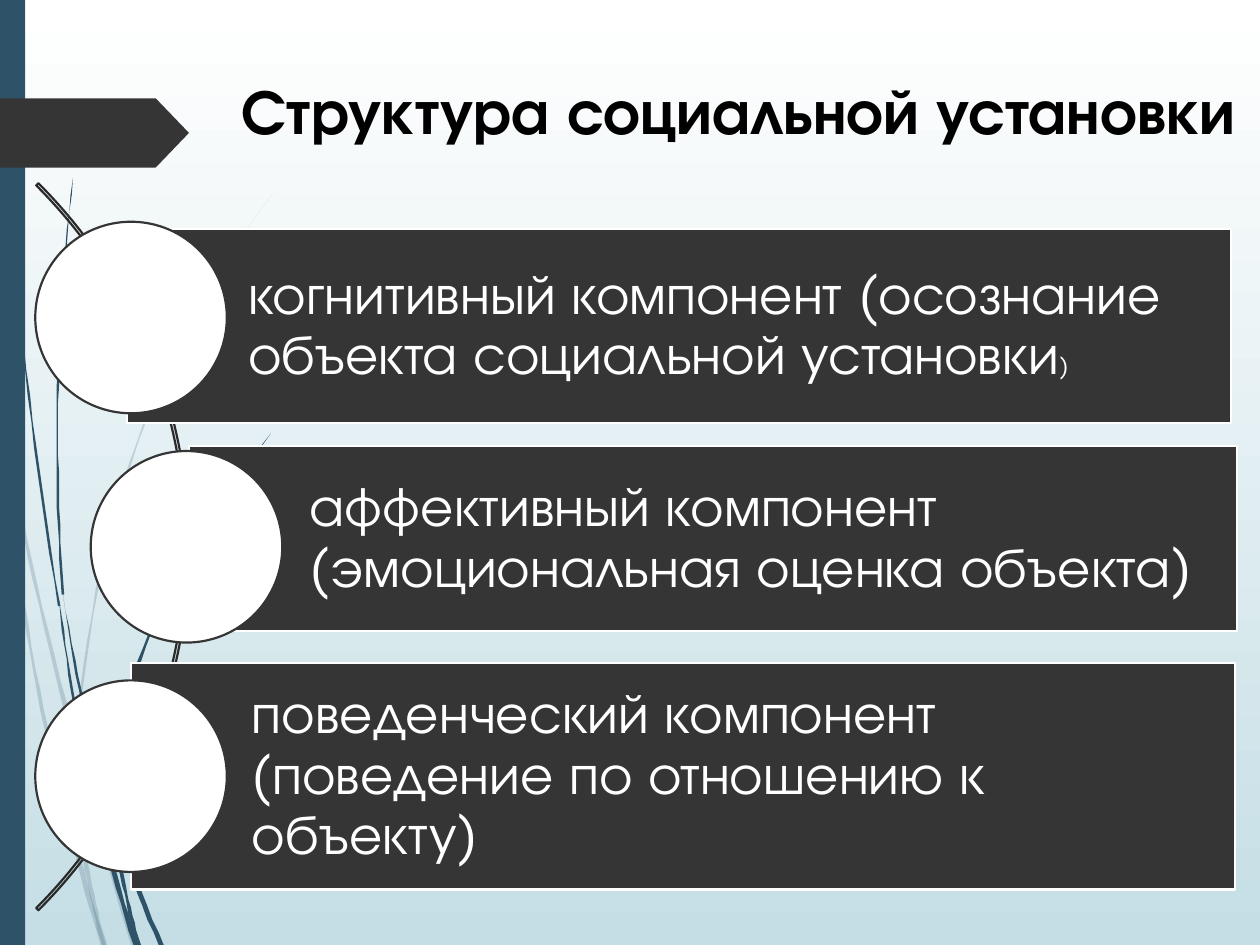
from math import sqrt

from lxml.etree import SubElement
from pptx import Presentation
from pptx.dml.color import RGBColor
from pptx.enum.shapes import MSO_SHAPE
from pptx.enum.text import MSO_ANCHOR, PP_ALIGN
from pptx.oxml.ns import qn
from pptx.util import Inches, Pt

FONT = "TeX Gyre Adventor"
WHITE = RGBColor(0xFF, 0xFF, 0xFF)
BLACK = RGBColor(0, 0, 0)
PALE = RGBColor(0xC5, 0xDE, 0xE5)
BLUE = RGBColor(0x2E, 0x53, 0x69)
DARK = RGBColor(0x35, 0x35, 0x35)
ARC = RGBColor(0x2A, 0x2A, 0x2A)

COLUMNS, ROWS = 1000, 750
prs = Presentation()
prs.slide_width, prs.slide_height = Inches(10), Inches(7.5)
CELL = prs.slide_width // COLUMNS
s = prs.slides.add_slide(prs.slide_layouts.get_by_name("Title Only"))

bg = s.background.fill
bg.gradient()
bg.gradient_angle = 270
for stop, color, pos in zip(bg.gradient_stops, (WHITE, PALE), (0, 1)):
    stop.color.rgb = color
    stop.position = pos


def paint(sp, fill=None, line=None):
    sp.shadow.inherit = False
    for part, color in ((sp.fill, fill), (sp.line.fill, line)):
        if color is None:
            part.background()
        else:
            part.solid()
            part.fore_color.rgb = color
    if line is not None:
        sp.line.width = Pt(1.25)


def add_preset(kind, left, top, width, height, fill=None, line=None):
    sp = s.shapes.add_shape(
        kind, left * CELL, top * CELL, width * CELL, height * CELL)
    paint(sp, fill, line)
    return sp


STEPS = 24
FAINT, SOLID = 20, 100
grass = [
    # tip, bend, root, root_width, opacity
]
grass = [
    ((0, 290), (11, 440), (106, ROWS), 4, FAINT),
    ((8, 350), (9, 510), (82, ROWS), 4, FAINT),
    ((217, 153), (80, 326), (60, 596), 2, FAINT),
    ((60, 590), (60, 670), (83, ROWS), 4, FAINT),
    ((2, 0), (4, 226), (47, 481), 2, SOLID),
    ((50, 472), (74, 630), (128, ROWS), 4, SOLID),
    ((47, 477), (64, 617), (108, ROWS), 4, SOLID),
    ((58, 141), (38, 306), (50, 472), 2, SOLID),
    ((215, 344), (88, 508), (89, 641), 3, SOLID),
    ((88, 631), (90, 675), (110, ROWS), 3, SOLID),
]
for tip, bend, root, root_width, opacity in grass:
    left_edge, right_edge = [], []
    for step in range(STEPS + 1):
        t = step / STEPS
        x, y = ((1 - t) ** 2 * a + 2 * t * (1 - t) * b + t ** 2 * c
                for a, b, c in zip(tip, bend, root))
        half = root_width * sqrt(t) / 2
        left_edge.append((x - half, y))
        right_edge.append((x + half, y))
    outline = left_edge + right_edge[::-1]
    fb = s.shapes.build_freeform(*outline[0], scale=CELL)
    fb.add_line_segments(outline[1:], close=True)
    blade = fb.convert_to_shape()
    paint(blade, BLUE)
    color = blade.element.spPr.find(qn("a:solidFill"))[0]
    SubElement(color, qn("a:alpha"), val=str(opacity * 1000))

add_preset(MSO_SHAPE.RECTANGLE, 0, 0, 20, ROWS, BLUE)
marker = add_preset(MSO_SHAPE.PENTAGON, 0, 78, 150, 55, DARK)
marker.adjustments[0] = 0.48

title = s.shapes.title
title.left, title.top = 130 * CELL, -CELL
title.width, title.height = 900 * CELL, 85 * CELL
tf = title.text_frame
tf.text = "Структура социальной установки"
tf.word_wrap = True
tf.vertical_anchor = MSO_ANCHOR.TOP
tf.margin_left, tf.margin_top, tf.margin_bottom = 22 * CELL, 58 * CELL, 0
p = tf.paragraphs[0]
p.alignment = PP_ALIGN.CENTER
p.font.name, p.font.size, p.font.bold = FONT, Pt(36), True
p.font.color.rgb = BLACK

arc = add_preset(MSO_SHAPE.BLOCK_ARC, -666, 26, 816, 816, line=ARC)
for i, value in enumerate((189, 27, 0.003)):
    arc.adjustments[i] = value

CIRCLE, CIRCLE_TOP, CIRCLE_STEP = 152, 176, 182
components = [
    ((101, 182, 876, 154), 28,
     [("когнитивный компонент (осознание объекта социальной установки", 32), (")", 14)]),
    ((150, 354, 832, 147), 72,
     [("аффективный компонент (эмоциональная оценка объекта)", 32)]),
    ((104, 526, 876, 180), 28,
     [("поведенческий компонент (поведение по отношению к объекту)", 32)]),
]
for row, (bar_box, circle_left, runs) in enumerate(components):
    bar = add_preset(MSO_SHAPE.RECTANGLE, *bar_box, DARK, WHITE)
    tf = bar.text_frame
    tf.word_wrap = True
    tf.vertical_anchor = MSO_ANCHOR.MIDDLE
    tf.margin_left = 96 * CELL
    tf.margin_right = tf.margin_top = tf.margin_bottom = 9 * CELL
    p = tf.paragraphs[0]
    p.alignment = PP_ALIGN.LEFT
    p.line_spacing = 0.9
    p.font.name = FONT
    p.font.color.rgb = WHITE
    for text, size in runs:
        r = p.add_run()
        r.text = text
        r.font.size = Pt(size)
    add_preset(MSO_SHAPE.OVAL, circle_left, CIRCLE_TOP + CIRCLE_STEP * row,
               CIRCLE, CIRCLE, WHITE, DARK)

prs.save("out.pptx")
